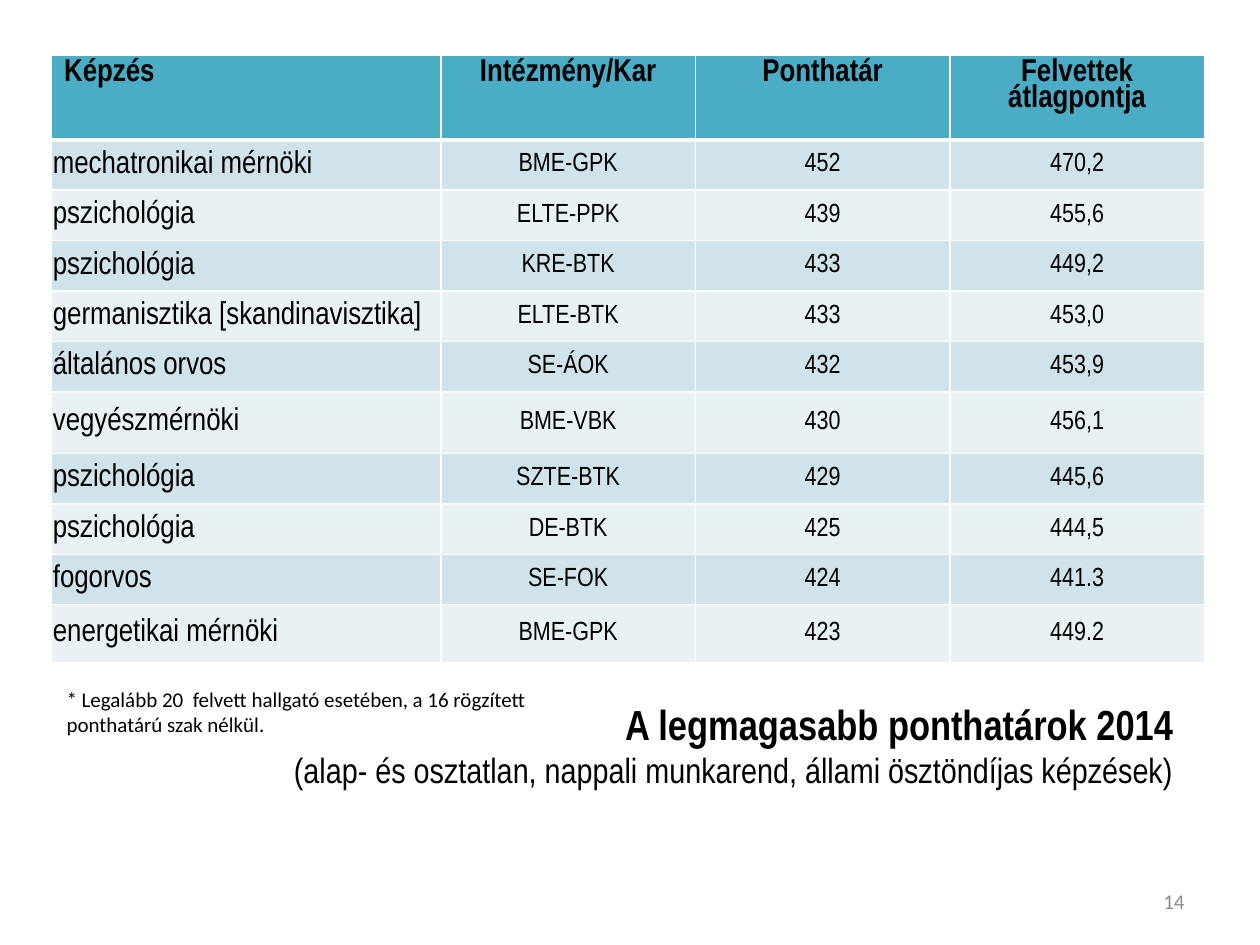
"""Build the slide listing the highest admission score thresholds of 2014."""
from lxml import etree
from pptx import Presentation
from pptx import util as u
from pptx.dml.color import RGBColor
from pptx.enum import text
from pptx.oxml import ns

LEFT, CENTER, RIGHT = text.PP_ALIGN.LEFT, text.PP_ALIGN.CENTER, text.PP_ALIGN.RIGHT
TOP, MIDDLE = text.MSO_ANCHOR.TOP, text.MSO_ANCHOR.MIDDLE


def paint(color_format, hex_color):
    color_format.rgb = RGBColor.from_string(hex_color)


def write(paragraph, words, size, font_name, hex_color="000000", bold=False):
    run = paragraph.add_run()
    run.text = words
    for key, value in {"size": u.Pt(size), "name": font_name, "bold": bold}.items():
        setattr(run.font, key, value)
    paint(run.font.color, hex_color)


deck = Presentation()
deck.slide_width, deck.slide_height = u.Inches(10), u.Inches(7.5)
slide = deck.slides.add_slide(deck.slide_layouts[6])

rows = [
    ("Képzés", "Intézmény/Kar", "Ponthatár", "Felvettek átlagpontja"),
    ("mechatronikai mérnöki", "BME-GPK", "452", "470,2"),
    ("pszichológia", "ELTE-PPK", "439", "455,6"),
    ("pszichológia", "KRE-BTK", "433", "449,2"),
    ("germanisztika [skandinavisztika]", "ELTE-BTK", "433", "453,0"),
    ("általános orvos", "SE-ÁOK", "432", "453,9"),
    ("vegyészmérnöki", "BME-VBK", "430", "456,1"),
    ("pszichológia", "SZTE-BTK", "429", "445,6"),
    ("pszichológia", "DE-BTK", "425", "444,5"),
    ("fogorvos", "SE-FOK", "424", "441.3"),
    ("energetikai mérnöki", "BME-GPK", "423", "449.2"),
]
widths = [3.09, 2.02, 2.02, 2.02]
heights = [0.67] + [0.4] * 5 + [0.49] + [0.4] * 3 + [0.46]
cell_format = {
    "vertical_anchor": MIDDLE,
    "margin_left": u.Inches(0.01),
    "margin_top": u.Inches(0.01),
    "margin_right": u.Inches(0.01),
    "margin_bottom": 0,
}
thresholds = slide.shapes.add_table(
    len(rows), len(widths), u.Inches(0.41), u.Inches(0.44),
    u.Inches(sum(widths)), u.Inches(sum(heights))).table
for column, width in zip(thresholds.columns, widths):
    column.width = u.Inches(width)
for r, (row, height) in enumerate(zip(rows, heights)):
    thresholds.rows[r].height = u.Inches(height)
    for c, words in enumerate(row):
        cell = thresholds.cell(r, c)
        properties = cell._tc.get_or_add_tcPr()
        border_points = {"lnL": 1, "lnR": 1, "lnT": 3 if r == 1 else 1, "lnB": 3 if r == 0 else 1}
        for side, points in border_points.items():
            border = etree.SubElement(properties, ns.qn(f"a:{side}"), w=str(u.Pt(points)))
            border_fill = etree.SubElement(border, ns.qn("a:solidFill"))
            etree.SubElement(border_fill, ns.qn("a:srgbClr"), val="FFFFFF")
        cell.fill.solid()
        paint(cell.fill.fore_color, "4BACC6" if r == 0 else "D0E3EA" if r % 2 else "E9F1F5")
        if r:
            for key, value in cell_format.items():
                setattr(cell, key, value)
        entry = cell.text_frame.paragraphs[0]
        entry.alignment = CENTER if c else LEFT
        entry.line_spacing = 0.85
        write(entry, words, 15 if r and c else 18, "Arial Narrow", bold=r == 0)

captions = [
    ((0.2, 5.4, 9.21, 1.02), MIDDLE, RIGHT, [
        ("A legmagasabb ponthatárok 2014", 24, "Arial Narrow", "000000", True),
        ("(alap- és osztatlan, nappali munkarend, állami ösztöndíjas képzések)",
         20, "Arial Narrow")]),
    ((0.43, 5.4, 4.37, 0.81), TOP, LEFT, [
        ("* Legalább 20  felvett hallgató esetében, a 16 rögzített ponthatárú szak nélkül.",
         12, "Calibri")]),
    ((7.17, 6.95, 2.33, 0.4), MIDDLE, RIGHT, [("14", 12, "Calibri", "8C8C8C")]),
]
for place, anchor, alignment, lines in captions:
    frame = slide.shapes.add_textbox(*map(u.Inches, place)).text_frame
    frame.word_wrap = True
    frame.vertical_anchor = anchor
    caption = frame.paragraphs[0]
    caption.alignment = alignment
    for i, line in enumerate(lines):
        if i:
            caption.add_line_break()
        write(caption, *line)

deck.save("out.pptx")
